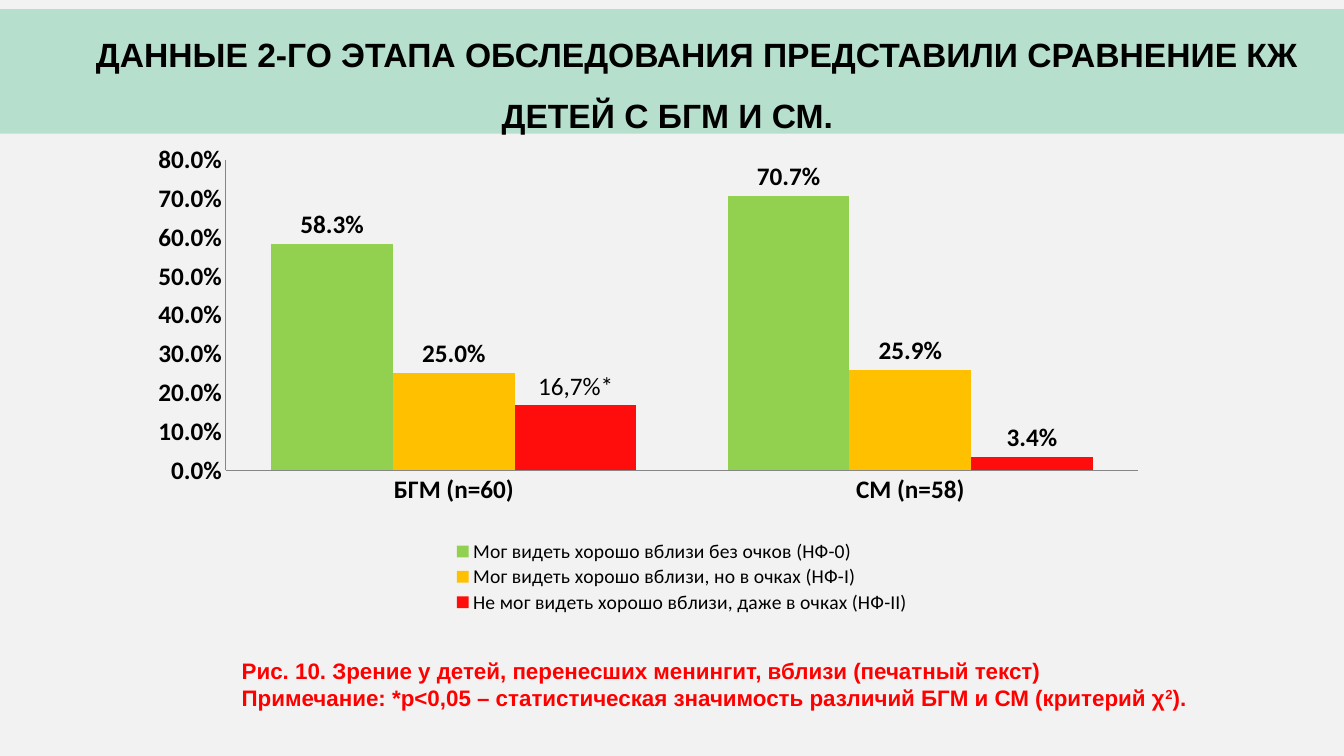
from lxml import etree
from pptx import Presentation
from pptx.chart.data import CategoryChartData
from pptx.dml.color import RGBColor
from pptx.enum.chart import XL_CHART_TYPE, XL_LABEL_POSITION, XL_LEGEND_POSITION, XL_TICK_MARK
from pptx.enum.shapes import MSO_SHAPE
from pptx.enum.text import MSO_ANCHOR, PP_ALIGN
from pptx.oxml.ns import qn
from pptx.util import Pt

COLUMNS = XL_CHART_TYPE.COLUMN_CLUSTERED
OUTSIDE_END = XL_LABEL_POSITION.OUTSIDE_END
BOTTOM = XL_LEGEND_POSITION.BOTTOM
NO_TICKS = XL_TICK_MARK.NONE
RECTANGLE = MSO_SHAPE.RECTANGLE
TOP = MSO_ANCHOR.TOP
CENTER = PP_ALIGN.CENTER

BACKGROUND = RGBColor(0xF2, 0xF2, 0xF2)
MINT = RGBColor(0xB6, 0xDF, 0xCD)
BLACK = RGBColor(0, 0, 0)
RED = RGBColor(0xFF, 0, 0)
AXIS_GRAY = RGBColor(0x86, 0x86, 0x86)

PERCENT = "0.0%"
TITLE = "ДАННЫЕ 2-ГО ЭТАПА ОБСЛЕДОВАНИЯ ПРЕДСТАВИЛИ СРАВНЕНИЕ КЖ ДЕТЕЙ С БГМ И СМ. "
GROUPS = ["БГМ (n=60)", "СМ (n=58)"]
VISION = [
    ("Мог видеть хорошо вблизи без очков (НФ-0)", (0.583, 0.707), RGBColor(0x92, 0xD0, 0x50)),
    ("Мог видеть хорошо вблизи, но в очках (НФ-I)", (0.25, 0.259), RGBColor(0xFF, 0xC0, 0)),
    ("Не мог видеть хорошо вблизи, даже в очках (НФ-II)", (0.167, 0.034), RGBColor(0xFF, 0x0D, 0x0D)),
]
# Each caption line is a list of (text, is superscript)
CAPTION = [
    [("Рис. 10. Зрение у детей, перенесших менингит, вблизи (печатный текст)", False)],
    [("Примечание: *p<0,05 – статистическая значимость различий БГМ и СМ (критерий χ", False),
     ("2", True), (").", False)],
]


def style_font(font, name, size, color, bold=True):
    font.name = name
    font.size = Pt(size)
    font.bold = bold
    font.color.rgb = color


def indent_first_line(paragraph, points):
    paragraph._p.get_or_add_pPr().set("indent", str(Pt(points)))


def add_title_band(slide):
    band = slide.shapes.add_shape(RECTANGLE, 0, Pt(6.5), Pt(960), Pt(89))
    band.shadow.inherit = False
    band.fill.solid()
    band.fill.fore_color.rgb = MINT
    band.line.fill.background()
    band.text_frame.word_wrap = True
    band.text_frame.vertical_anchor = TOP
    paragraph = band.text_frame.paragraphs[0]
    paragraph.text = TITLE
    paragraph.alignment = CENTER
    paragraph.line_spacing = 1.5
    paragraph.space_after = Pt(10)
    indent_first_line(paragraph, 35.4)
    style_font(paragraph.font, "Arial", 24, BLACK)


def set_layout(parent, index, fractions, inner=False):
    """Place a chart part by its left, top, width and height fractions."""
    for old_layout in parent.findall(qn("c:layout")):
        parent.remove(old_layout)
    layout = etree.Element(qn("c:layout"))
    manual = etree.SubElement(layout, qn("c:manualLayout"))
    settings = [("xMode", "edge"), ("yMode", "edge"), *zip("xywh", fractions)]
    if inner:
        settings.insert(0, ("layoutTarget", "inner"))
    for tag, value in settings:
        etree.SubElement(manual, qn("c:" + tag)).set("val", str(value))
    parent.insert(index, layout)


def style_axis(axis):
    axis.has_major_gridlines = False
    axis.major_tick_mark = NO_TICKS
    axis.minor_tick_mark = NO_TICKS
    axis.format.line.color.rgb = AXIS_GRAY
    axis.format.line.width = Pt(0.75)


def style_series(series, color):
    series.format.fill.solid()
    series.format.fill.fore_color.rgb = color
    labels = series.data_labels
    labels.show_value = True
    labels.number_format = PERCENT
    labels.number_format_is_linked = False
    labels.position = OUTSIDE_END


def add_vision_chart(slide):
    chart_data = CategoryChartData(number_format=PERCENT)
    chart_data.categories = GROUPS
    for name, values, _ in VISION:
        chart_data.add_series(name, values)
    chart = slide.shapes.add_chart(
        COLUMNS, Pt(93), Pt(93.5), Pt(758.2), Pt(346.3), chart_data).chart
    chart.has_title = False
    style_font(chart.font, "Calibri", 18, BLACK)

    # Columns and labels
    plot = chart.plots[0]
    plot.gap_width = 75
    plot.overlap = 0
    plot.vary_by_categories = False
    for series, (_, _, color) in zip(plot.series, VISION):
        style_series(series, color)
    starred = plot.series[2].points[0].data_label
    paragraph = starred.text_frame.paragraphs[0]
    run = paragraph.add_run()
    run.text = "16,7%*"
    style_font(run.font, "Calibri", 18, BLACK, bold=False)
    starred.position = OUTSIDE_END

    # Axes
    style_axis(chart.category_axis)
    value_axis = chart.value_axis
    style_axis(value_axis)
    value_axis.minimum_scale = 0
    value_axis.maximum_scale = 0.8
    value_axis.major_unit = 0.1
    value_axis.tick_labels.number_format = PERCENT
    value_axis.tick_labels.number_format_is_linked = False

    # Legend and layout
    chart.has_legend = True
    legend = chart.legend
    legend.position = BOTTOM
    legend.include_in_layout = False
    style_font(legend.font, "Calibri", 14, BLACK, bold=False)
    plot_area = chart._chartSpace.chart.plotArea
    set_layout(plot_area, 0, (0.09, 0.06, 0.86, 0.64), inner=True)
    set_layout(legend._element, 1, (0.27, 0.84, 0.5, 0.16))


def add_caption(slide):
    box = slide.shapes.add_textbox(Pt(133.2), Pt(466), Pt(732.2), Pt(46))
    frame = box.text_frame
    frame.word_wrap = False
    frame.vertical_anchor = TOP
    for number, pieces in enumerate(CAPTION):
        paragraph = frame.add_paragraph() if number else frame.paragraphs[0]
        indent_first_line(paragraph, 32.4)
        style_font(paragraph.font, "Arial", 16, RED)
        for text, superscript in pieces:
            run = paragraph.add_run()
            run.text = text
            if superscript:
                run._r.get_or_add_rPr().set("baseline", "30000")


def main():
    presentation = Presentation()
    presentation.slide_width = Pt(960)
    presentation.slide_height = Pt(540)
    slide = presentation.slides.add_slide(presentation.slide_layouts[6])
    slide.background.fill.solid()
    slide.background.fill.fore_color.rgb = BACKGROUND
    add_title_band(slide)
    add_vision_chart(slide)
    add_caption(slide)
    presentation.save("out.pptx")


if __name__ == "__main__":
    main()
